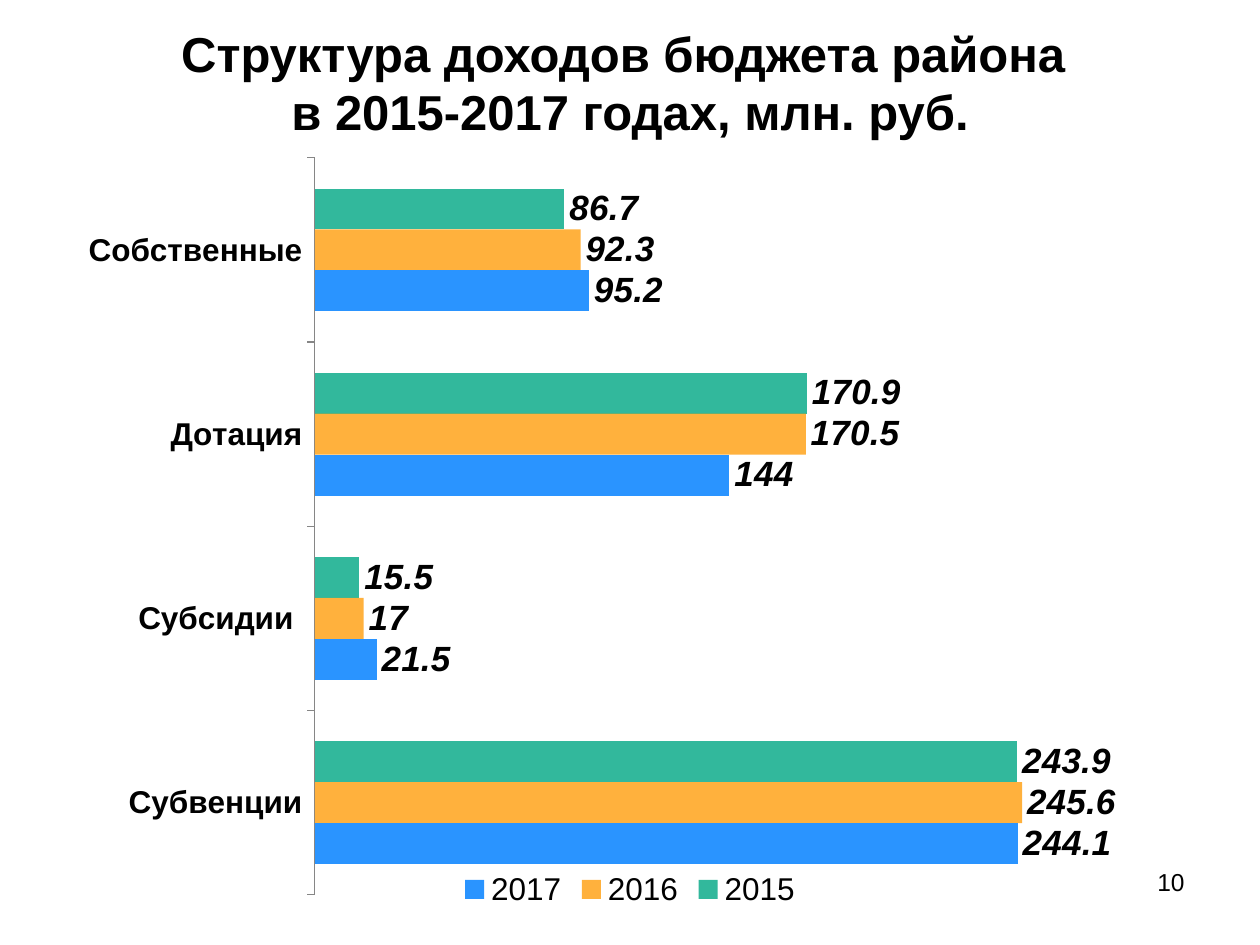
from lxml import etree
from pptx import Presentation
from pptx.chart.data import CategoryChartData
from pptx.dml.color import RGBColor
from pptx.enum.chart import XL_CHART_TYPE as CT, XL_LABEL_POSITION as LP
from pptx.enum.chart import XL_LEGEND_POSITION as LEG, XL_TICK_MARK as TM
from pptx.enum.text import MSO_ANCHOR, PP_ALIGN
from pptx.oxml import parse_xml
from pptx.oxml.ns import nsdecls, qn
from pptx.util import Inches, Pt

# Content
TITLE = ["Структура доходов бюджета района ", "в 2015-2017 годах, млн. руб."]
PAGE = "10"
CATEGORIES = ["Собственные", "Дотация", "Субсидии ", "Субвенции"]
SERIES = [  # name, values, colour, opacity in percent
    ("2015", [86.7, 170.9, 15.5, 243.9], "32B89C", 100),
    ("2016", [92.3, 170.5, 17, 245.6], "FF9900", 76),
    ("2017", [95.2, 144, 21.5, 244.1], "2A94FF", 100),
]
PLOT = {"x": 0.222, "y": 0.028, "w": 0.762, "h": 0.948}


def rgb(color):
    return RGBColor.from_string(color)


def style(font, size, bold=False, italic=False):
    font.name, font.size = "Arial", Pt(size)
    font.bold, font.italic = bold, italic
    font.color.rgb = rgb("000000")


def place(shape, x, y, w, h):
    shape.left, shape.top = Inches(x), Inches(y)
    shape.width, shape.height = Inches(w), Inches(h)


def set_plot_layout(chart):
    sizes = "".join(f'<c:{k} val="{v}"/>' for k, v in PLOT.items())
    layout = parse_xml(
        f'<c:layout {nsdecls("c")}><c:manualLayout><c:layoutTarget val="inner"/>'
        f'<c:xMode val="edge"/><c:yMode val="edge"/>{sizes}</c:manualLayout></c:layout>')
    area = chart._chartSpace.chart.plotArea
    for old in area.findall(qn("c:layout")):
        area.remove(old)
    area.insert(0, layout)


prs = Presentation()
prs.slide_width, prs.slide_height = Inches(10), Inches(7.5)
s = prs.slides.add_slide(prs.slide_layouts[5])

# Title
title = s.shapes.title
place(title, 0.5, 0.3, 9, 0.7)
tf = title.text_frame
tf.vertical_anchor = MSO_ANCHOR.MIDDLE
p = tf.paragraphs[0]
p.alignment = PP_ALIGN.CENTER
for i, line in enumerate(TITLE):
    if i:
        p.add_line_break()
    r = p.add_run()
    r.text = line
    style(r.font, 28, bold=True)

# Chart
data = CategoryChartData()
data.categories = CATEGORIES
for name, values, *_ in SERIES:
    data.add_series(name, values)
chart = s.shapes.add_chart(CT.BAR_CLUSTERED, Inches(0.5), Inches(1.08),
                           Inches(9), Inches(6.17), data).chart
style(chart.font, 18)
chart.has_title = False
chart.has_legend = True
chart.legend.position = LEG.BOTTOM
chart.legend.include_in_layout = False
style(chart.legend.font, 18)
set_plot_layout(chart)

# Axes
cat, val = chart.category_axis, chart.value_axis
cat.reverse_order = True
cat.major_tick_mark = TM.OUTSIDE
cat.format.line.color.rgb = rgb("868686")
style(cat.tick_labels.font, 18, bold=True)
val.minimum_scale, val.maximum_scale = 0, 300
val.has_major_gridlines = False
val.visible = False

# Bars and their labels
plot = chart.plots[0]
plot.gap_width = 150
plot.vary_by_categories = False
for series, (_, _, color, opacity) in zip(plot.series, SERIES):
    fill = series.format.fill
    fill.solid()
    fill.fore_color.rgb = rgb(color)
    if opacity < 100:
        clr = series._element.find(".//" + qn("a:srgbClr"))
        etree.SubElement(clr, qn("a:alpha"), val=str(opacity * 1000))
    labels = series.data_labels
    labels.show_value = True
    labels.position = LP.OUTSIDE_END
    style(labels.font, 20, bold=True, italic=True)

# Page number
tf = s.shapes.add_textbox(Inches(7.17), Inches(6.83), Inches(2.33), Inches(0.52)).text_frame
tf.word_wrap = True
p = tf.paragraphs[0]
p.alignment = PP_ALIGN.RIGHT
r = p.add_run()
r.text = PAGE
style(r.font, 14)

prs.save("out.pptx")
